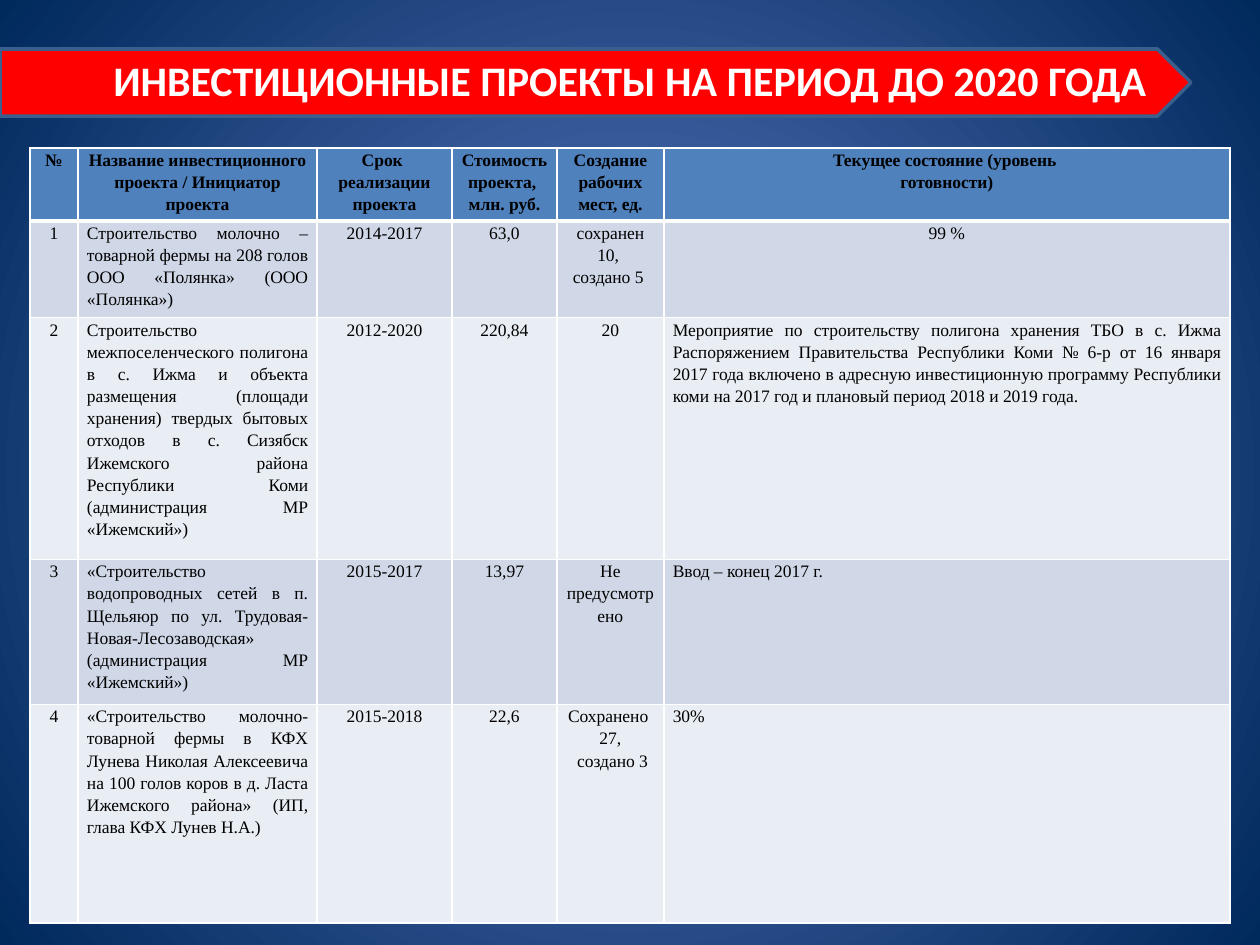
import pptx
import pptx.dml.color
import pptx.enum.shapes
import pptx.enum.text
import pptx.oxml
import pptx.oxml.ns
import pptx.util

EMU_PER_PX = 914400 / 126
ALIGN = pptx.enum.text.PP_ALIGN
ANCHOR = pptx.enum.text.MSO_ANCHOR


class Theme:
    glow, night = "5E7CC5", "00295C"
    banner, banner_line = "FF0000", "3A5F8C"
    header, bands = "4F81BD", ("D0D8E8", "E9EDF4")
    white, black = "FFFFFF", "000000"
    title_font, table_font = "Calibri", "Times New Roman"
    title_size, table_size = 24, 10


COLUMNS = [48, 239, 135, 105, 107, 566]
ROWS = [73, 93, 233, 140, 219]
HEADER = ["№", "Название инвестиционного проекта / Инициатор проекта",
          "Срок \nреализации проекта", "Стоимость проекта, \nмлн. руб.",
          "Создание рабочих мест, ед.",
          "Текущее состояние (уровень \nготовности)"]
PROJECTS = [
    ["1", "Строительство молочно – товарной фермы на 208 голов "
     "ООО «Полянка» (ООО «Полянка»)",
     "2014-2017", "63,0", "сохранен 10, \nсоздано 5 ", "99 %"],
    ["2", "Строительство межпоселенческого полигона в с. Ижма и объекта "
     "размещения (площади хранения) твердых бытовых отходов в с. Сизябск "
     "Ижемского района Республики Коми (администрация МР «Ижемский»)",
     "2012-2020", "220,84", "20",
     "Мероприятие по строительству полигона хранения ТБО в с. Ижма "
     "Распоряжением Правительства Республики Коми № 6-р от 16 января "
     "2017 года включено в адресную инвестиционную программу Республики "
     "коми на 2017 год и плановый период 2018 и 2019 года."],
    ["3", "«Строительство водопроводных сетей в п. Щельяюр по ул. "
     "Трудовая-Новая-Лесозаводская» (администрация МР «Ижемский»)",
     "2015-2017", "13,97", "Не предусмотрено", "Ввод – конец 2017 г."],
    ["4", "«Строительство молочно-товарной фермы в КФХ Лунева Николая "
     "Алексеевича на 100 голов коров в д. Ласта Ижемского района» "
     "(ИП, глава КФХ Лунев Н.А.)",
     "2015-2018", "22,6", "Сохранено \n27,\n создано 3", "30%"],
]


def px(n):
    return pptx.util.Emu(round(n * EMU_PER_PX))


def rgb(value):
    return pptx.dml.color.RGBColor.from_string(value)


def drawing_xml(body):
    """Parse one DrawingML element, given without its namespace declaration."""
    tag, rest = body.split(" ", 1)
    return pptx.oxml.parse_xml(f"{tag} {pptx.oxml.ns.nsdecls('a')} {rest}")


def write(tf, text, *, font, size, color, bold=False, align=ALIGN.CENTER,
          spacing=1.0):
    """Fill a text frame, one paragraph for each line of text."""
    tf.word_wrap = True
    for i, line in enumerate(text.split("\n")):
        p = tf.add_paragraph() if i else tf.paragraphs[0]
        p.alignment, p.line_spacing = align, spacing
        r = p.add_run()
        r.text = line
        r.font.name, r.font.size = font, pptx.util.Pt(size)
        r.font.bold, r.font.color.rgb = bold, rgb(color)


class Deck:
    def __init__(self, theme):
        self.theme = theme
        self.prs = pptx.Presentation()
        self.prs.slide_width, self.prs.slide_height = px(1260), px(945)
        self.s = self.prs.slides.add_slide(self.prs.slide_layouts[6])

    def background(self):
        """Radial gradient from the glow in the middle to dark corners."""
        fill = self.s.background.fill
        fill.gradient()
        stops = zip(fill.gradient_stops, (self.theme.glow, self.theme.night))
        for position, (stop, color) in enumerate(stops):
            stop.position, stop.color.rgb = position, rgb(color)
        grad = next(self.s.element.iter(pptx.oxml.ns.qn("a:gradFill")))
        grad.remove(grad.find(pptx.oxml.ns.qn("a:lin")))
        grad.append(drawing_xml(
            '<a:path path="circle"><a:fillToRect l="50000" t="50000" '
            'r="50000" b="50000"/></a:path>'))

    def banner(self, x, y, w, h):
        sp = self.s.shapes.add_shape(
            pptx.enum.shapes.MSO_SHAPE.PENTAGON, px(x), px(y), px(w), px(h))
        sp.shadow.inherit = False
        sp.fill.solid()
        sp.fill.fore_color.rgb = rgb(self.theme.banner)
        sp.line.color.rgb = rgb(self.theme.banner_line)
        sp.line.width = pptx.util.Pt(2)

    def title(self, text, x, y, w, h):
        tf = self.s.shapes.add_textbox(px(x), px(y), px(w), px(h)).text_frame
        tf.vertical_anchor = ANCHOR.MIDDLE
        write(tf, text, font=self.theme.title_font, bold=True,
              size=self.theme.title_size, color=self.theme.white)

    def borders(self, cell, **widths):
        """Draw white cell borders; widths in points by side L, R, T, B."""
        tc_pr = cell._tc.get_or_add_tcPr()
        for i, (side, width) in enumerate(widths.items()):
            tc_pr.insert(i, drawing_xml(
                f'<a:ln{side} w="{pptx.util.Pt(width)}"><a:solidFill>'
                f'<a:srgbClr val="{self.theme.white}"/></a:solidFill>'
                f'</a:ln{side}>'))

    def cell(self, cell, text, fill, **text_format):
        cell.fill.solid()
        cell.fill.fore_color.rgb = rgb(fill)
        cell.margin_left = cell.margin_right = px(9)
        cell.margin_top = cell.margin_bottom = 0
        cell.vertical_anchor = ANCHOR.TOP
        write(cell.text_frame, text, font=self.theme.table_font,
              size=self.theme.table_size, color=self.theme.black,
              spacing=1.15, **text_format)

    def table(self, x, y, columns, rows, header, body):
        table = self.s.shapes.add_table(
            len(rows), len(columns), px(x), px(y),
            px(sum(columns)), px(sum(rows))).table
        for column, width in zip(table.columns, columns):
            column.width = px(width)
        for row, height in zip(table.rows, rows):
            row.height = px(height)
        for i, values in enumerate([header] + body):
            fill = self.theme.bands[(i - 1) % 2] if i else self.theme.header
            for j, text in enumerate(values):
                long_text = i > 0 and (j == 1 or j == 5 and i > 1)
                cell = table.cell(i, j)
                self.cell(cell, text, fill, bold=i == 0,
                          align=ALIGN.JUSTIFY if long_text else ALIGN.CENTER)
                self.borders(cell, L=1, R=1, T=3 if i == 1 else 1,
                             B=1 if i else 3)


def main():
    deck = Deck(Theme)
    deck.background()
    deck.banner(0, 49, 1191, 67)
    deck.title("ИНВЕСТИЦИОННЫЕ ПРОЕКТЫ НА ПЕРИОД ДО 2020 ГОДА",
               63, 20, 1134, 120)
    deck.table(30, 148, COLUMNS, ROWS, HEADER, PROJECTS)
    deck.prs.save("out.pptx")


if __name__ == "__main__":
    main()
